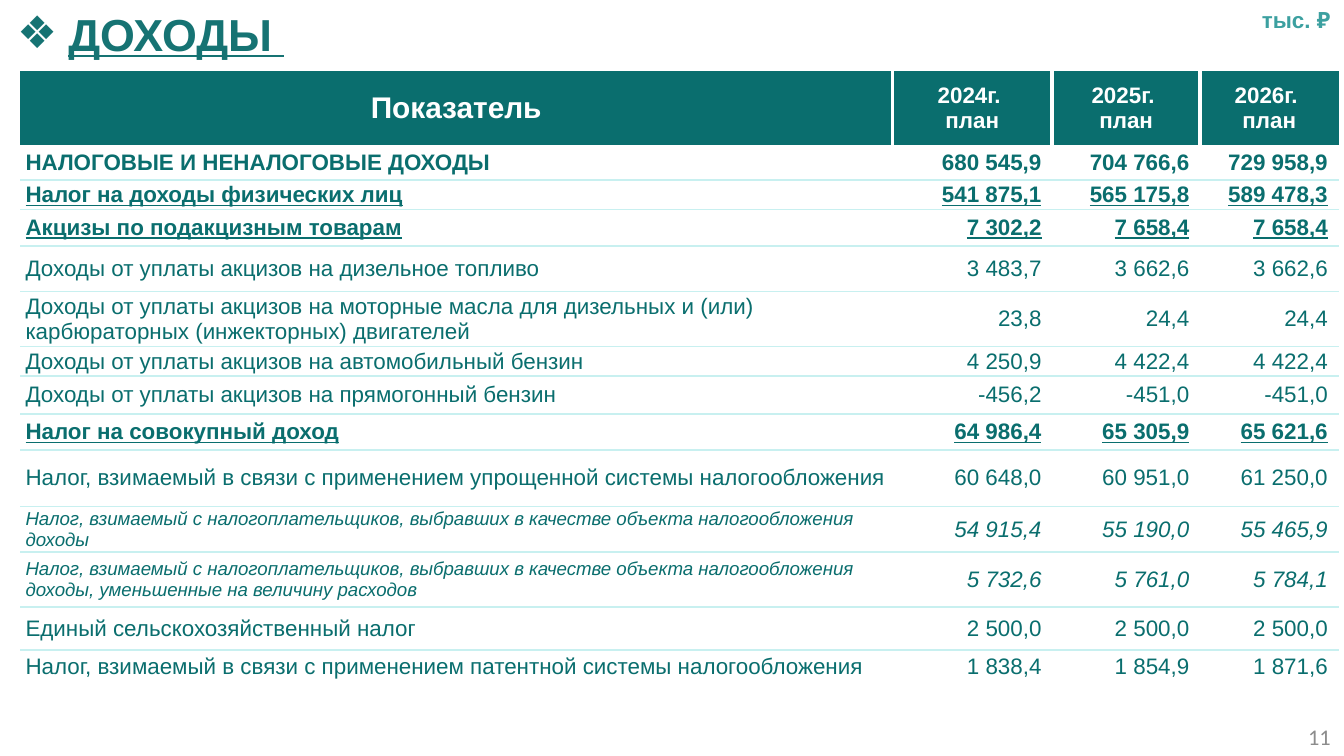
import pptx
import pptx.util
import pptx.dml.color
import pptx.enum.text
import pptx.oxml
import pptx.oxml.ns
from lxml import etree

Inches = pptx.util.Inches
Pt = pptx.util.Pt
ALIGN = pptx.enum.text.PP_ALIGN
MIDDLE = pptx.enum.text.MSO_ANCHOR.MIDDLE
qn = pptx.oxml.ns.qn

THEME = {
    "font": "Arial", "plain": "Calibri",
    "teal": "0A6E6E", "title": "167373", "unit": "3CA0A0",
    "white": "FFFFFF", "rule": "C8F0F0", "grey": "8C8C8C",
    "big": 24, "head": 16, "body": 12, "small": 10,
}

STYLES = {
    "total": {"bold": True},
    "group": {"bold": True, "under": True},
    "item": {},
    "detail": {"italic": True},
}

HEADS = ["Показатель", "2024г. \nплан", "2025г. \nплан", "2026г. \nплан"]
HEIGHT = 0.55
WIDTHS = [6.49, 1.19, 1.1, 1.03]

ROWS = [
    ("total", 0.26, "НАЛОГОВЫЕ И НЕНАЛОГОВЫЕ ДОХОДЫ", "680 545,9", "704 766,6", "729 958,9"),
    ("group", 0.22, "Налог на доходы физических лиц", "541 875,1", "565 175,8", "589 478,3"),
    ("group", 0.27, "Акцизы по подакцизным товарам", "7 302,2", "7 658,4", "7 658,4"),
    ("item", 0.34, "Доходы от уплаты акцизов на дизельное топливо", "3 483,7", "3 662,6", "3 662,6"),
    ("item", 0.41, "Доходы от уплаты акцизов на моторные масла для дизельных и (или) "
     "карбюраторных (инжекторных) двигателей", "23,8", "24,4", "24,4"),
    ("item", 0.22, "Доходы от уплаты акцизов на автомобильный бензин", "4 250,9", "4 422,4", "4 422,4"),
    ("item", 0.28, "Доходы от уплаты акцизов на прямогонный бензин", "-456,2", "-451,0", "-451,0"),
    ("group", 0.27, "Налог на совокупный доход", "64 986,4", "65 305,9", "65 621,6"),
    ("item", 0.42, "Налог, взимаемый в связи с применением упрощенной системы налогообложения",
     "60 648,0", "60 951,0", "61 250,0"),
    ("detail", 0.34, "Налог, взимаемый с налогоплательщиков, выбравших в качестве объекта "
     "налогообложения доходы", "54 915,4", "55 190,0", "55 465,9"),
    ("detail", 0.41, "Налог, взимаемый с налогоплательщиков, выбравших в качестве объекта "
     "налогообложения доходы, уменьшенные на величину расходов", "5 732,6", "5 761,0", "5 784,1"),
    ("item", 0.32, "Единый сельскохозяйственный налог", "2 500,0", "2 500,0", "2 500,0"),
    ("item", 0.24, "Налог, взимаемый в связи с применением патентной системы налогообложения",
     "1 838,4", "1 854,9", "1 871,6"),
]


def write(frame, text, size="body", color="teal", font="font", align=ALIGN.LEFT,
          bold=False, italic=False, under=False, bullet=None):
    for n, line in enumerate(text.split("\n")):
        para = frame.add_paragraph() if n else frame.paragraphs[0]
        para.alignment = align
        if bullet:
            props = para._p.get_or_add_pPr()
            props.set("marL", str(Inches(0.38)))
            props.set("indent", str(-Inches(0.38)))
            etree.SubElement(props, qn("a:buFont")).set("typeface", THEME["font"])
            etree.SubElement(props, qn("a:buChar")).set("char", bullet)
        run = para.add_run()
        run.text = line
        face = run.font
        face.name = THEME[font]
        face.size = Pt(THEME[size])
        face.bold, face.italic, face.underline = bold, italic, under
        face.color.rgb = pptx.dml.color.RGBColor.from_string(THEME[color])


def label(slide, box, text, wrap=True, anchor=None, **form):
    frame = slide.shapes.add_textbox(*map(Inches, box)).text_frame
    frame.word_wrap = wrap
    if anchor is not None:
        frame.vertical_anchor = anchor
    write(frame, text, **form)


def border(cell, lines):
    props = cell._tc.get_or_add_tcPr()
    for side in "LRTB":
        edge = etree.SubElement(props, qn("a:ln" + side))
        if side in lines:
            color, width = lines[side]
            edge.set("w", str(Pt(width)))
            fill = etree.SubElement(edge, qn("a:solidFill"))
            etree.SubElement(fill, qn("a:srgbClr")).set("val", THEME[color])
        else:
            edge.set("w", "0")
            etree.SubElement(edge, qn("a:noFill"))


def inset(cell, left, top, right, bottom):
    cell.margin_left, cell.margin_top = Inches(left), Inches(top)
    cell.margin_right, cell.margin_bottom = Inches(right), Inches(bottom)
    cell.vertical_anchor = MIDDLE


def header(table):
    for col, text in enumerate(HEADS):
        cell = table.cell(0, col)
        side = 0 if col else 0.1
        inset(cell, side, 0.05, side, 0.05)
        lines = {}
        if col:
            lines["L"] = ("white", 2.25)
        if col < len(HEADS) - 1:
            lines["R"] = ("white", 2.25)
        border(cell, lines)
        cell.fill.solid()
        cell.fill.fore_color.rgb = pptx.dml.color.RGBColor.from_string(THEME["teal"])
        write(cell.text_frame, text, size="body" if col else "head",
              color="white", align=ALIGN.CENTER, bold=True)


def body(table):
    for row, (style, _, *texts) in enumerate(ROWS, 1):
        lines = {}
        if row > 1:
            lines["T"] = ("rule", 1)
        if row < len(ROWS):
            lines["B"] = ("rule", 1)
        for col, text in enumerate(texts):
            cell = table.cell(row, col)
            inset(cell, 0 if col else 0.04, 0, 0.08 if col else 0, 0)
            border(cell, lines)
            cell.fill.background()
            size = "small" if style == "detail" and not col else "body"
            write(cell.text_frame, text, size=size,
                  align=ALIGN.RIGHT if col else ALIGN.LEFT, **STYLES[style])


def main():
    deck = pptx.Presentation()
    deck.slide_width, deck.slide_height = Inches(10), Inches(10 * 9 / 16)
    slide = deck.slides.add_slide(deck.slide_layouts[6])

    label(slide, (7.67, 5.33, 2.33, 0.3), "11", anchor=MIDDLE,
          font="plain", color="grey", align=ALIGN.RIGHT)

    heights = [HEIGHT] + [row[1] for row in ROWS]
    box = (0.15, 0.53, sum(WIDTHS), sum(heights))
    table = slide.shapes.add_table(len(heights), len(WIDTHS), *map(Inches, box)).table
    table.first_row = table.horz_banding = False
    for col, width in zip(table.columns, WIDTHS):
        col.width = Inches(width)
    for row, height in zip(table.rows, heights):
        row.height = Inches(height)
    header(table)
    body(table)

    label(slide, (9.29, 0, 0.71, 0.3), "тыс. ₽", wrap=False, color="unit", bold=True)
    label(slide, (0.03, 0, 2.37, 0.5), "ДОХОДЫ ", size="big", color="title",
          bold=True, under=True, bullet="❖")
    deck.save("out.pptx")


if __name__ == "__main__":
    main()
